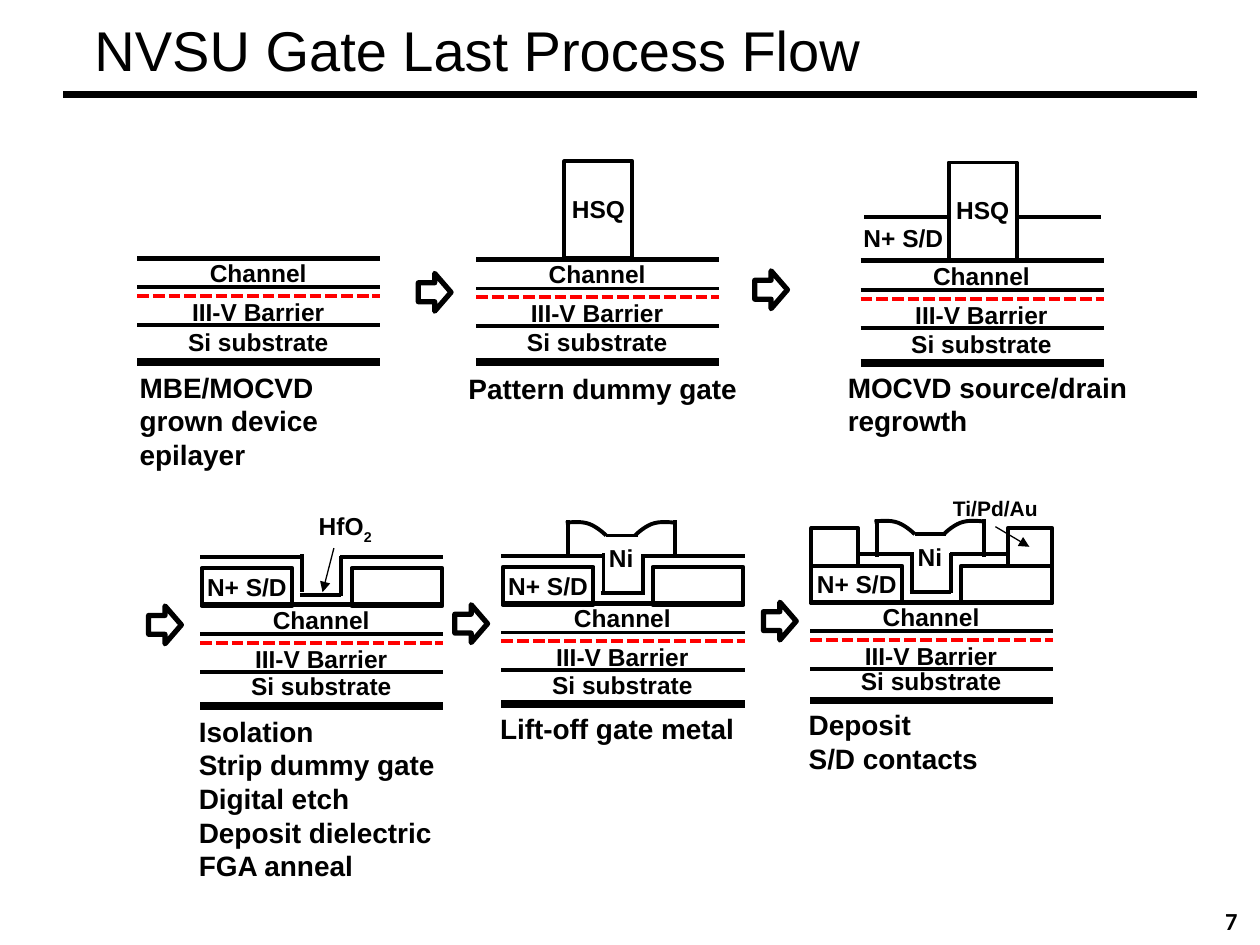
from lxml.etree import SubElement
from pptx import Presentation
from pptx.dml.color import RGBColor
from pptx.enum.dml import MSO_LINE as Dash
from pptx.enum.shapes import MSO_CONNECTOR as Conn, MSO_SHAPE as Shape
from pptx.enum.text import MSO_ANCHOR as Anchor, PP_ALIGN as Align
from pptx.oxml.ns import qn
from pptx.util import Emu, Pt

PX = 9144  # 100 px to the inch
COLORS = {"ink": "000000", "doping": "FF0000"}
THIN, MEDIUM, THICK, HEAVY = 0.75, 2.25, 3, 4.5


def px(n):
    return Emu(round(n * PX))


def rgb(name):
    return RGBColor.from_string(COLORS[name])


def stroke(ln, width, color="ink"):
    ln.color.rgb = rgb(color)
    ln.width = Pt(width)


def line(shapes, x1, y1, x2, y2, width=MEDIUM, color="ink", dashed=False, arrow=False):
    c = shapes.add_connector(Conn.STRAIGHT, px(x1), px(y1), px(x2), px(y2))
    stroke(c.line, width, color)
    if dashed:
        c.line.dash_style = Dash.SQUARE_DOT
    if arrow:
        SubElement(c.line._get_or_add_ln(), qn("a:tailEnd"), type="triangle")
    SubElement(c._element.spPr, qn("a:effectLst"))


def outline(shapes, x, y, w, h, kind=Shape.RECTANGLE, width=MEDIUM):
    sp = shapes.add_shape(kind, px(x), px(y), px(w), px(h))
    sp.shadow.inherit = False
    sp.fill.background()
    stroke(sp.line, width)


def add_run(p, text, size, font="Arial", bold=True):
    r = p.add_run()
    r.text = text
    r.font.size, r.font.name, r.font.bold = Pt(size), font, bold
    r.font.color.rgb = rgb("ink")
    return r


def text_frame(shapes, x, y, w, h, wrap=True):
    tf = shapes.add_textbox(px(x), px(y), px(w), px(h)).text_frame
    tf.word_wrap = wrap
    return tf


def label(shapes, cx, y, w, text, sub="", size=14):
    """One centred line of text around cx, with an optional subscript."""
    tf = text_frame(shapes, cx - w / 2, y, w, 34, wrap=False)
    p = tf.paragraphs[0]
    p.alignment = Align.CENTER
    add_run(p, text, size)
    if sub:
        add_run(p, sub, size).font._element.set("baseline", "-25000")


def caption(shapes, x, y, w, *paragraphs):
    tf = text_frame(shapes, x, y, w, 10 + 27 * len(paragraphs))
    for i, text in enumerate(paragraphs):
        p = tf.add_paragraph() if i else tf.paragraphs[0]
        add_run(p, text, 16)


def wafer(shapes, x, y, depth):
    """Layer stack whose channel surface starts at x, y."""
    for dy, width in ((0, THICK), (23, MEDIUM), (53, MEDIUM), (depth, HEAVY)):
        line(shapes, x, y + dy, x + 193, y + dy, width)
    line(shapes, x, y + 30, x + 193, y + 30, color="doping", dashed=True)
    for text, dy, w in (("Channel", -5, 97), ("III-V Barrier", 26, 126),
                        ("Si substrate", depth - 32, 132)):
        label(shapes, x + 96, y + dy, w, text)


def dummy_gate(shapes, x, y):
    outline(shapes, x + 70, y - 78, 54, 77)
    label(shapes, x + 97, y - 57, 63, "HSQ")


def regrowth(shapes, x, y):
    for left, right in ((3, 71), (124, 191)):
        line(shapes, x + left, y - 35, x + right, y - 35)
    label(shapes, x + 34, y - 35, 84, "N+ S/D")


def source_drain(shapes, x, y):
    for dx in (1, 120):
        outline(shapes, x + dx, y - 29, 72, 30)
    label(shapes, x + 37, y - 31, 84, "N+ S/D")


def dielectric(shapes, x, y, left=0, right=193):
    """Film running from left to right, dipping into the gate trench."""
    for x1, y1, x2, y2 in ((left, -38, 82, -38), (81, -40, 81, -10), (79, -8, 112, -8),
                           (112, -7, 112, -39), (111, -38, right, -38)):
        line(shapes, x + x1, y + y1, x + x2, y + y2)


def bezier(a, b, c, d, steps=6):
    for i in range(1, steps + 1):
        t = i / steps
        u = 1 - t
        yield tuple(u**3 * m + 3 * u * u * t * n + 3 * u * t * t * o + t**3 * q
                    for m, n, o, q in zip(a, b, c, d))


def gate_metal(shapes, x, y):
    for dx in (53, 138):
        line(shapes, x + dx, y - 36, x + dx, y - 66)
    line(shapes, x + 83, y - 54, x + 108, y - 54)
    start, bend = (51, -64), (70, -63)
    shoulder = [start, *bezier(start, (58, -65), (65, -65), bend),
                *bezier(bend, (75, -61), (80, -57), (83, -54))]
    for side in (shoulder, [(189 - dx, dy) for dx, dy in shoulder]):
        points = [(px(x + dx), px(y + dy)) for dx, dy in side]
        fb = shapes.build_freeform(*points[0])
        fb.add_line_segments(points[1:], close=False)
        sp = fb.convert_to_shape()
        sp.shadow.inherit = False
        sp.fill.background()
        stroke(sp.line, MEDIUM)
    label(shapes, x + 95, y - 53, 40, "Ni")


def contacts(shapes, x, y):
    for dx, w in ((1, 37), (157, 35)):
        outline(shapes, x + dx, y - 59, w, 30)
    label(shapes, x + 147, y - 90, 88, "Ti/Pd/Au", size=12)
    line(shapes, x + 147, y - 60, x + 174, y - 44, THIN, arrow=True)


def epilayer_step(shapes, x, y):
    wafer(shapes, x, y, 82)
    caption(shapes, x - 8, y + 84, 215, "MBE/MOCVD grown device epilayer")


def dummy_gate_step(shapes, x, y):
    wafer(shapes, x, y, 81)
    dummy_gate(shapes, x, y)
    caption(shapes, x - 16, y + 84, 240, "Pattern dummy gate")


def regrowth_step(shapes, x, y):
    wafer(shapes, x, y, 81)
    dummy_gate(shapes, x, y)
    regrowth(shapes, x, y)
    caption(shapes, x - 20, y + 82, 265, "MOCVD source/drain regrowth")


def dielectric_step(shapes, x, y):
    wafer(shapes, x, y, 80)
    source_drain(shapes, x, y)
    dielectric(shapes, x, y)
    label(shapes, x + 115, y - 79, 63, "HfO", sub="2")
    line(shapes, x + 106, y - 45, x + 97, y - 10, THIN, arrow=True)
    caption(shapes, x - 11, y + 82, 216, "Isolation", "Strip dummy gate",
            "Digital etch", "Deposit dielectric", "FGA anneal")


def gate_metal_step(shapes, x, y):
    wafer(shapes, x, y, 80)
    source_drain(shapes, x, y)
    dielectric(shapes, x, y)
    gate_metal(shapes, x, y)
    caption(shapes, x - 11, y + 81, 215, "Lift-off gate metal")


def contacts_step(shapes, x, y):
    wafer(shapes, x, y, 78)
    source_drain(shapes, x, y)
    dielectric(shapes, x, y, left=38, right=157)
    gate_metal(shapes, x, y)
    contacts(shapes, x, y)
    caption(shapes, x - 11, y + 79, 160, "Deposit", "S/D contacts")


def frame(shapes, title, number):
    """Title, rule and page number."""
    line(shapes, 50, 75, 950, 75, HEAVY)
    tf = text_frame(shapes, 75, 1, 850, 83)
    tf.margin_left = tf.margin_right = tf.margin_top = tf.margin_bottom = 0
    tf.vertical_anchor = Anchor.MIDDLE
    tf.paragraphs[0].line_spacing = 0.87
    add_run(tf.paragraphs[0], title, 32, bold=False)
    p = text_frame(shapes, 925, 717, 67, 27).paragraphs[0]
    p.alignment, p.line_spacing = Align.RIGHT, 0.9
    add_run(p, number, 14, font="Calibri")


def main():
    prs = Presentation()
    prs.slide_width, prs.slide_height = px(1000), px(750)
    s = prs.slides.add_slide(prs.slide_layouts[6])
    frame(s.shapes, "NVSU Gate Last Process Flow", "7")
    steps = ((epilayer_step, 109, 205), (dummy_gate_step, 378, 206), (regrowth_step, 683, 207),
             (dielectric_step, 159, 480), (gate_metal_step, 398, 479), (contacts_step, 643, 478))
    for draw, x, y in steps:
        draw(s.shapes.add_group_shape().shapes, x, y)
    for x, y in ((332, 217), (599, 215), (118, 481), (361, 480), (606, 478)):
        outline(s.shapes, x, y, 26, 30, Shape.RIGHT_ARROW, THICK)
    prs.save("out.pptx")


if __name__ == "__main__":
    main()
